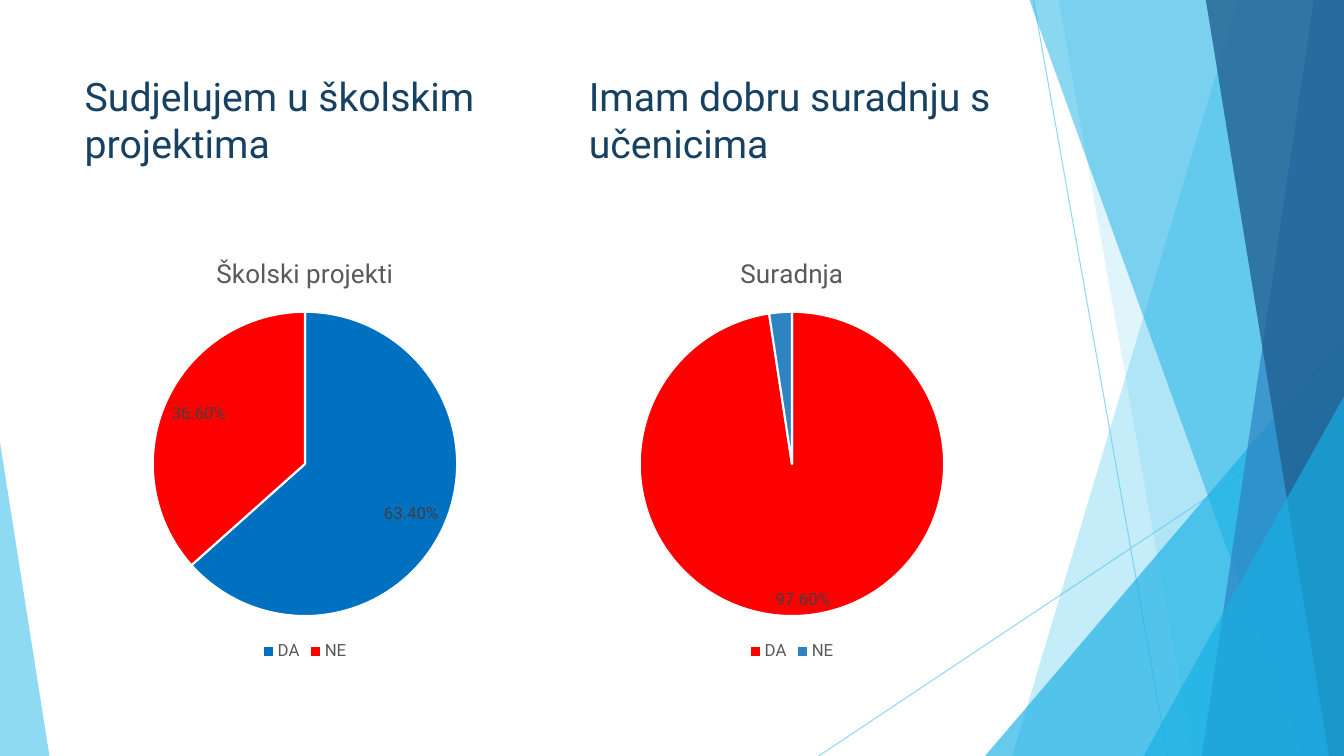
"""Builds a slide with two survey pie charts on a faceted blue background."""
from lxml.etree import SubElement
from pptx import Presentation
from pptx.chart.data import CategoryChartData
from pptx.dml.color import RGBColor
from pptx.enum.chart import XL_CHART_TYPE, XL_LABEL_POSITION, XL_LEGEND_POSITION
from pptx.enum.shapes import MSO_CONNECTOR, MSO_SHAPE
from pptx.enum.text import MSO_ANCHOR, MSO_AUTO_SIZE, PP_ALIGN
from pptx.oxml.ns import qn
from pptx.util import Inches, Pt

FONT = "Roboto"
WIDE, HIGH = 13.33, 7.5
COLORS = {
    "sky": "5FCBEF", "cyan": "17B0E4", "steel": "2E83C3", "navy": "226292",
    "title": "174162", "blue": "0070C0", "red": "FF0000",
    "gray": "595959", "label": "404040", "white": "FFFFFF",
}
TITLE = [
    ("Sudjelujem u školskim", "Imam dobru suradnju s"),
    ("projektima", "učenicima"),
]
CATS = ["DA", "NE"]
PIES = [
    ("Školski projekti", [0.634, 0.366], ["blue", "red"], [0, 1], 0.74),
    ("Suradnja", [0.976, 0.024], ["red", "steel"], [0], 5.57),
]
LINES = [(10.25, 0, 11.58, HIGH), (WIDE, 4.03, 8.12, HIGH)]
FACETS = [
    ("band", 12.28, 10.04, "sky", 36),
    ("band", 10.5, 11.83, "sky", 20),
    ("peak", 9.77, 3.33, 3.56, 1, "cyan", 66),
    ("band", 10.21, 12.91, "cyan", 50),
    ("band", 13.03, 11.92, "steel", 70),
    ("band", 11.96, 13.18, "navy", 80),
    ("peak", 11.34, 3.93, 1.99, 1, "cyan", 66),
    ("peak", 0, 4.39, 0.49, 0, "sky", 70),
]


def color(name):
    return RGBColor.from_string(COLORS[name])


def fade(item, alpha):
    for node in item.iter(qn("a:srgbClr")):
        SubElement(node, qn("a:alpha")).set("val", str(alpha * 1000))


def style(font, size, name):
    font.name, font.size, font.bold = FONT, Pt(size), False
    font.color.rgb = color(name)


def add_line(slide, ends):
    line = slide.shapes.add_connector(MSO_CONNECTOR.STRAIGHT, *map(Inches, ends))
    line.line.color.rgb = color("sky")
    line.line.width = Pt(0.75)
    props = line._element.spPr
    fade(props, 70)
    SubElement(props, qn("a:effectLst"))


def add_facet(slide, kind, *spec):
    *place, name, alpha = spec
    if kind == "band":
        top, base = place
        build = slide.shapes.build_freeform(Inches(top), 0)
        build.add_line_segments([
            (Inches(x), Inches(y))
            for x, y in [(WIDE, 0), (WIDE, HIGH), (base, HIGH)]
        ])
        shape = build.convert_to_shape()
    else:
        left, top, width, tip = place
        shape = slide.shapes.add_shape(
            MSO_SHAPE.ISOSCELES_TRIANGLE,
            *map(Inches, (left, top, width, HIGH - top)))
        shape.adjustments[0] = tip
    shape.shadow.inherit = False
    shape.line.fill.background()
    shape.fill.solid()
    shape.fill.fore_color.rgb = color(name)
    fade(shape._element.spPr, alpha)


def add_title(slide):
    title = slide.shapes.title
    title.left, title.top, title.width, title.height = map(
        Inches, (0.74, 0.67, 9.4, 1.44))
    frame = title.text_frame
    frame.text = "\v".join("\t".join(row) for row in TITLE)
    frame.word_wrap = True
    frame.auto_size = MSO_AUTO_SIZE.NONE
    frame.vertical_anchor = MSO_ANCHOR.TOP
    para = frame.paragraphs[0]
    para.alignment = PP_ALIGN.LEFT
    style(para.font, 28, "title")
    stops = para._p.get_or_add_pPr()
    tabs = stops.makeelement(qn("a:tabLst"))
    SubElement(tabs, qn("a:tab"), pos=str(Inches(5)), algn="l")
    stops.insert_element_before(tabs, "a:defRPr", "a:extLst")
    slide.shapes._spTree.append(title._element)


def add_pie(slide, name, values, fills, shown, left):
    data = CategoryChartData(number_format="0.00%")
    data.categories = CATS
    data.add_series(name, values)
    chart = slide.shapes.add_chart(
        XL_CHART_TYPE.PIE, *map(Inches, (left, 2.36, 4.57, 4.24)), data).chart
    style(chart.font, 12, "gray")
    chart.has_title = True
    head = chart.chart_title
    head.include_in_layout = False
    head.text_frame.text = name
    style(head.text_frame.paragraphs[0].font, 18.6, "gray")
    chart.has_legend = True
    chart.legend.position = XL_LEGEND_POSITION.BOTTOM
    chart.legend.include_in_layout = False
    style(chart.legend.font, 12, "gray")
    plot = chart.plots[0]
    plot.vary_by_categories = True
    series = plot.series[0]
    series.data_labels.show_value = False
    for i, fill in enumerate(fills):
        point = series.points[i]
        point.format.fill.solid()
        point.format.fill.fore_color.rgb = color(fill)
        point.format.line.color.rgb = color("white")
        point.format.line.width = Pt(1.5)
        if i in shown:
            style(point.data_label.font, 12, "label")
            point.data_label.position = XL_LABEL_POSITION.INSIDE_END


def main():
    deck = Presentation()
    deck.slide_width, deck.slide_height = Inches(WIDE), Inches(HIGH)
    slide = deck.slides.add_slide(deck.slide_layouts[5])
    for ends in LINES:
        add_line(slide, ends)
    for facet in FACETS:
        add_facet(slide, *facet)
    add_title(slide)
    for pie in PIES:
        add_pie(slide, *pie)
    deck.save("out.pptx")


if __name__ == "__main__":
    main()
